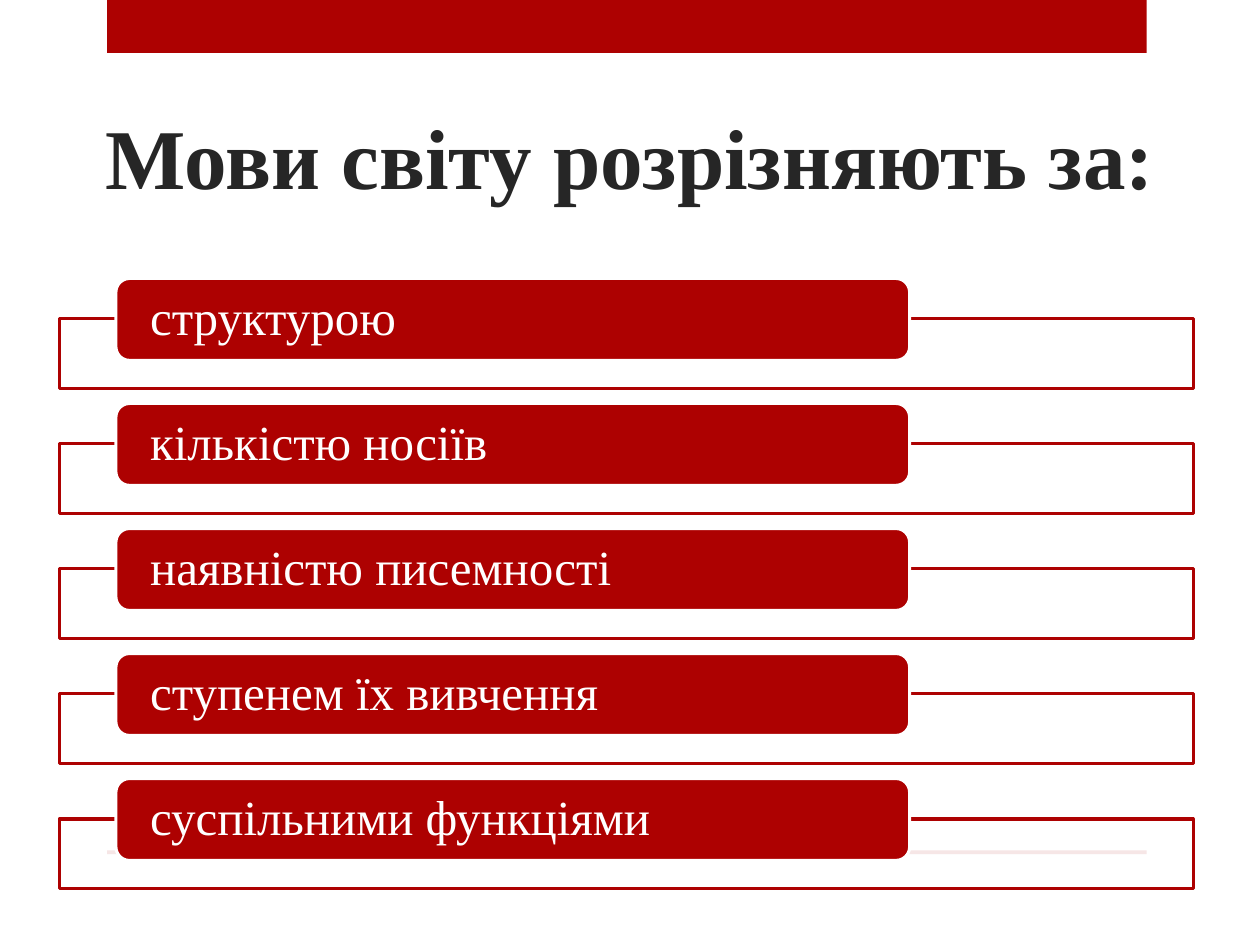
from lxml import etree
from pptx import Presentation
from pptx.dml.color import RGBColor
from pptx.enum.shapes import MSO_SHAPE
from pptx.enum.text import MSO_ANCHOR, MSO_AUTO_SIZE, PP_ALIGN
from pptx.oxml.ns import qn
from pptx.util import Inches, Pt

RECT, ROUND = MSO_SHAPE.RECTANGLE, MSO_SHAPE.ROUNDED_RECTANGLE
MIDDLE, BOTTOM = MSO_ANCHOR.MIDDLE, MSO_ANCHOR.BOTTOM
LEFT, CENTER = PP_ALIGN.LEFT, PP_ALIGN.CENTER
NO_FIT = MSO_AUTO_SIZE.NONE
RED = RGBColor(0xAD, 0x01, 0x01)
WHITE = RGBColor(0xFF, 0xFF, 0xFF)
DARK = RGBColor(0x26, 0x26, 0x26)

CRITERIA = ["структурою", "кількістю носіїв", "наявністю писемності",
            "ступенем їх вивчення", "суспільними функціями"]
ROW_STEP = 13.23


class Deck:
    """Holds the style and the current slide; lengths are percent of the slide."""

    font = "Times New Roman"
    line_width = Pt(1.75)

    def __init__(self):
        """Start a deck with one title-only slide."""
        self.prs = Presentation()
        self.prs.slide_width, self.prs.slide_height = Inches(10), Inches(7.5)
        self.s = self.prs.slides.add_slide(self.prs.slide_layouts[5])

    def area(self, x, y, w, h):
        """Turn percentages into slide lengths."""
        width, height = self.prs.slide_width, self.prs.slide_height
        return [int(v * side / 100)
                for v, side in zip((x, y, w, h), (width, height) * 2)]

    def add_text(self, sp, text, align, color, frame, font):
        """Put one formatted paragraph into a shape."""
        tf = sp.text_frame
        for name, value in frame.items():
            setattr(tf, name, value)
        p = tf.paragraphs[0]
        p.alignment, p.line_spacing = align, 0.9
        r = p.add_run()
        r.text = text
        for name, value in {"name": self.font, **font}.items():
            setattr(r.font, name, value)
        r.font.color.rgb = color

    def title(self, text, *area):
        """Place and fill the title placeholder."""
        sp = self.s.shapes.title
        sp.left, sp.top, sp.width, sp.height = self.area(*area)
        self.add_text(sp, text, CENTER, DARK,
                      {"vertical_anchor": BOTTOM, "word_wrap": True,
                       "auto_size": NO_FIT},
                      {"size": Pt(48.6), "bold": True})

    def box(self, kind, area, fill, line=None, opacity=100):
        """Draw a filled shape with an optional outline."""
        sp = self.s.shapes.add_shape(kind, *self.area(*area))
        sp.shadow.inherit = False
        sp.fill.solid()
        sp.fill.fore_color.rgb = fill
        if opacity < 100:
            color = sp.element.spPr.find(qn("a:solidFill"))[0]
            etree.SubElement(color, qn("a:alpha")).set("val", str(opacity * 1000))
        if line is None:
            sp.line.fill.background()
        else:
            sp.line.color.rgb = line
            sp.line.width = self.line_width
        return sp

    def criterion(self, row, text):
        """Draw one outlined row with its label."""
        offset = row * ROW_STEP
        self.box(RECT, (4.7, 33.75 + offset, 90, 7.33), WHITE, RED, 90)
        sp = self.box(ROUND, (9.2, 29.47 + offset, 63, 8.67), RED, WHITE)
        self.add_text(sp, text, LEFT, WHITE,
                      {"vertical_anchor": MIDDLE, "word_wrap": True,
                       "margin_left": Inches(0.24), "margin_right": Inches(0.24),
                       "margin_top": 0, "margin_bottom": 0},
                      {"size": Pt(28)})


def main():
    """Build the slide and save it."""
    deck = Deck()
    deck.box(RECT, (8.5, 0, 82.5, 5.6), RED)
    deck.box(RECT, (8.5, 90, 82.5, 0.4), RED)
    deck.title("Мови світу розрізняють за:", 5, 5.87, 90, 16.8)
    for row, text in enumerate(CRITERIA):
        deck.criterion(row, text)
    deck.prs.save("out.pptx")


if __name__ == "__main__":
    main()
